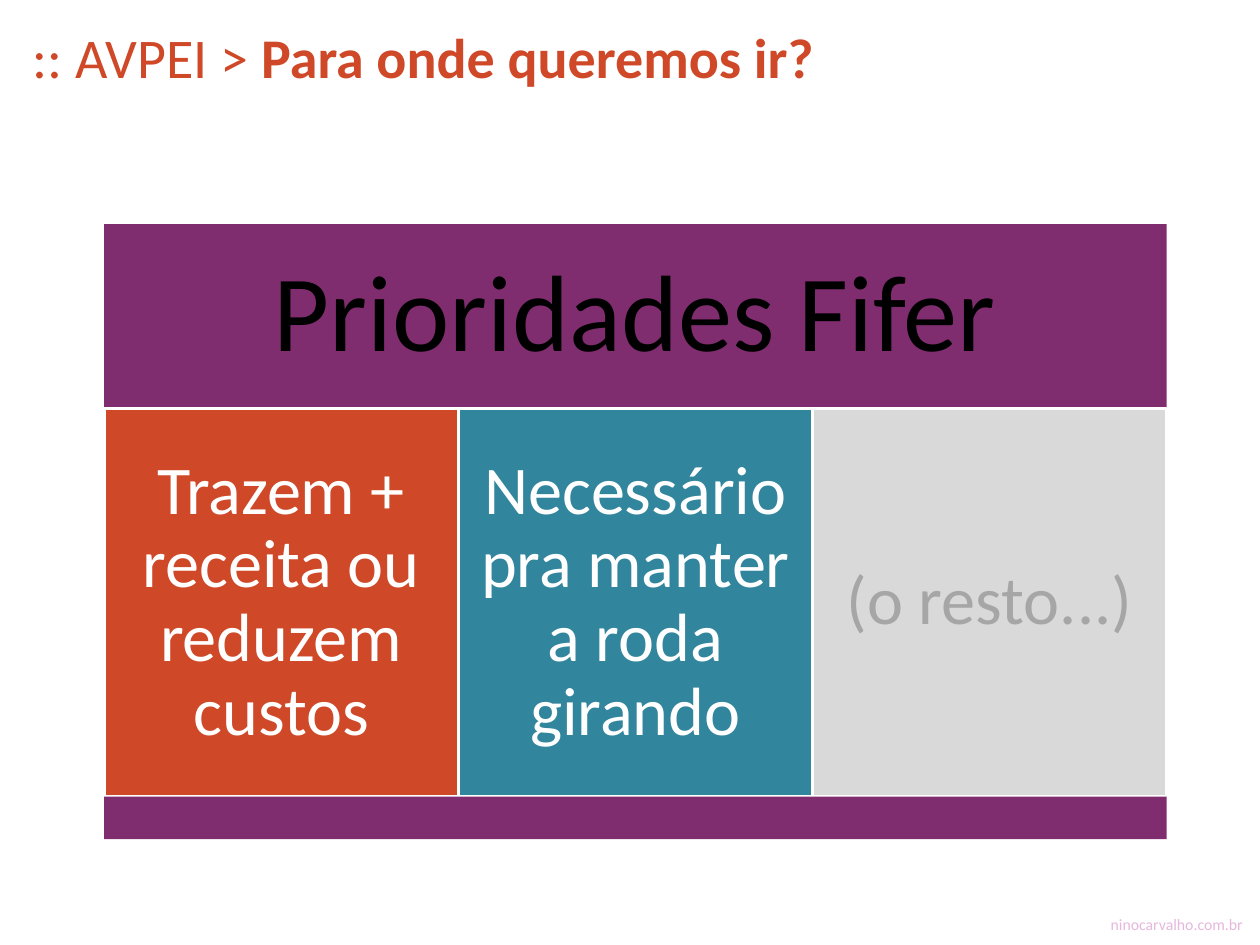
from pptx import Presentation
from pptx.dml.color import RGBColor
from pptx.enum import shapes, text
from pptx.util import Cm, Pt

TITLE = [(":: AVPEI > ", False), ("Para onde queremos ir?", True)]
SITE = "ninocarvalho.com.br"
HEADING = "Prioridades Fifer"
PRIORITIES = [  # wording, fill, text colour
    ("Trazem + receita ou reduzem custos", "CF4828", "FFFFFF"),
    ("Necessário pra manter a roda girando", "31859C", "FFFFFF"),
    ("(o resto...)", "D9D9D9", "A6A6A6"),
]
ORANGE, PURPLE, PINK, WHITE, BLACK = "CF4828", "802D6F", "E6B8DC", "FFFFFF", "000000"

LEFT, TOP, WIDTH = 2.1, 4.52, 21.42
HEADING_H, COLUMN_H, BASE_H = 3.72, 7.82, 0.86


def rgb(code):
    return RGBColor.from_string(code)


def style(paragraph, size, color, align):
    paragraph.alignment = align
    font = paragraph.font
    font.name, font.size = "Calibri", Pt(size)
    font.color.rgb = rgb(color)


def add_block(slide, x, y, w, h, fill, outline=None):
    block = slide.shapes.add_shape(
        shapes.MSO_SHAPE.RECTANGLE, Cm(x), Cm(y), Cm(w), Cm(h))
    block.shadow.inherit = False
    block.fill.solid()
    block.fill.fore_color.rgb = rgb(fill)
    if outline:
        block.line.color.rgb = rgb(outline)
        block.line.width = Pt(2)
    else:
        block.line.fill.background()
    return block


def write(block, wording, size, color, inset):
    frame = block.text_frame
    frame.word_wrap = True
    frame.vertical_anchor = text.MSO_ANCHOR.MIDDLE
    frame.margin_left = frame.margin_right = Cm(inset)
    frame.margin_top = frame.margin_bottom = Cm(inset)
    paragraph = frame.paragraphs[0]
    paragraph.text = wording
    paragraph.line_spacing = 0.9
    style(paragraph, size, color, text.PP_ALIGN.CENTER)


def main():
    prs = Presentation()
    prs.slide_width, prs.slide_height = Cm(25.4), Cm(19.05)
    slide = prs.slides.add_slide(prs.slide_layouts[5])

    site = slide.shapes.add_textbox(Cm(0.61), Cm(18.31), Cm(24.69), Cm(0.43))
    site.text_frame.word_wrap = True
    site_line = site.text_frame.paragraphs[0]
    site_line.text = SITE
    style(site_line, 9, PINK, text.PP_ALIGN.RIGHT)

    title = slide.shapes.title
    title.left, title.top, title.width, title.height = (
        Cm(0.41), Cm(0.33), Cm(23.09), Cm(1.4))
    title.text_frame.auto_size = text.MSO_AUTO_SIZE.NONE
    title.text_frame.vertical_anchor = text.MSO_ANCHOR.TOP
    title_line = title.text_frame.paragraphs[0]
    for wording, bold in TITLE:
        run = title_line.add_run()
        run.text, run.font.bold = wording, bold
    style(title_line, 32, ORANGE, text.PP_ALIGN.LEFT)

    heading = add_block(slide, LEFT, TOP, WIDTH, HEADING_H, PURPLE)
    write(heading, HEADING, 62, BLACK, 0.66)

    column_top = TOP + HEADING_H
    column_w = WIDTH / len(PRIORITIES)
    for i, (wording, fill, color) in enumerate(PRIORITIES):
        column = add_block(slide, LEFT + i * column_w, column_top,
                           column_w, COLUMN_H, fill, WHITE)
        write(column, wording, 39, color, 0.41)

    add_block(slide, LEFT, column_top + COLUMN_H, WIDTH, BASE_H, PURPLE)
    prs.save("out.pptx")


if __name__ == "__main__":
    main()
